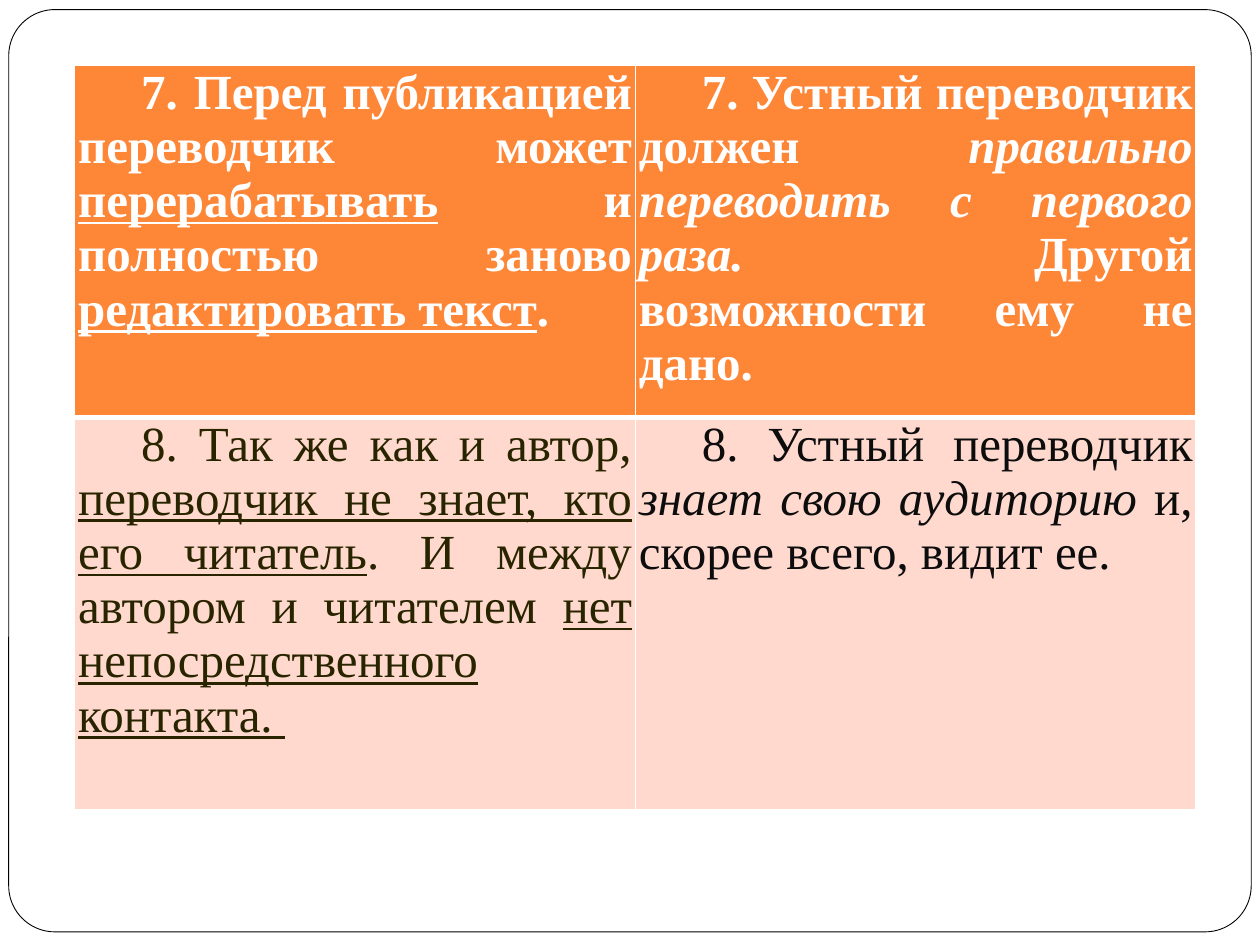
from lxml import etree
from pptx import Presentation
from pptx.dml.color import RGBColor
from pptx.enum.shapes import MSO_SHAPE
from pptx.enum.text import PP_ALIGN
from pptx.oxml.ns import qn
from pptx.util import Pt

ROUNDED = MSO_SHAPE.ROUNDED_RECTANGLE
JUSTIFY = PP_ALIGN.JUSTIFY

WHITE = RGBColor(0xFF, 0xFF, 0xFF)
BLACK = RGBColor(0x00, 0x00, 0x00)
ORANGE = RGBColor(0xFE, 0x86, 0x37)
PEACH = RGBColor(0xFF, 0xD9, 0xCE)
BROWN = RGBColor(0x29, 0x24, 0x00)
INK = RGBColor(0x0D, 0x0D, 0x0D)

PLAIN, UNDERLINED, ITALIC = "plain", "underlined", "italic"

COMPARISON = [
    {
        "height": 201, "fill": ORANGE, "bold": True, "colors": (WHITE, WHITE),
        "borders": {"L": 1, "R": 1, "T": 1, "B": 3},
        "cells": [
            [("7. Перед публикацией переводчик может ", PLAIN),
             ("перерабатывать", UNDERLINED),
             (" и полностью заново ", PLAIN),
             ("редактировать текст", UNDERLINED),
             (". ", PLAIN)],
            [("7. Устный переводчик должен ", PLAIN),
             ("правильно переводить с первого раза. ", ITALIC),
             ("Другой возможности ему не дано. ", PLAIN)],
        ],
    },
    {
        "height": 224, "fill": PEACH, "bold": False, "colors": (BROWN, INK),
        "borders": {"L": 1, "R": 1, "T": 3, "B": 1},
        "cells": [
            [("8. Так же как и автор, ", PLAIN),
             ("переводчик не знает, кто его читатель", UNDERLINED),
             (". И между автором и читателем ", PLAIN),
             ("нет непосредственного контакта. ", UNDERLINED)],
            [("8. Устный переводчик ", PLAIN),
             ("знает свою аудиторию ", ITALIC),
             ("и, скорее всего, видит ее. ", PLAIN)],
        ],
    },
]
COLUMN_WIDTH = 320.4


def set_borders(cell, widths):
    properties = cell._tc.get_or_add_tcPr()
    for side, width in widths.items():
        border = etree.SubElement(properties, qn(f"a:ln{side}"), w=str(Pt(width)))
        fill = etree.SubElement(border, qn("a:solidFill"))
        etree.SubElement(fill, qn("a:srgbClr"), val=str(WHITE))


def fill_cell(cell, row, color, phrases):
    set_borders(cell, row["borders"])
    cell.fill.solid()
    cell.fill.fore_color.rgb = row["fill"]
    cell.margin_left = cell.margin_right = Pt(2)
    cell.margin_top = cell.margin_bottom = Pt(0)
    paragraph = cell.text_frame.paragraphs[0]
    paragraph.alignment = JUSTIFY
    indents = paragraph._p.get_or_add_pPr()
    indents.set("marL", "0")
    indents.set("indent", str(Pt(36)))
    paragraph.font.name = "Times New Roman"
    paragraph.font.size = Pt(28)
    paragraph.font.bold = row["bold"]
    paragraph.font.color.rgb = color
    for wording, style in phrases:
        run = paragraph.add_run()
        run.text = wording
        if style == UNDERLINED:
            run.font.underline = True
        elif style == ITALIC:
            run.font.italic = True


def main():
    presentation = Presentation()
    presentation.slide_width, presentation.slide_height = Pt(720), Pt(540)
    slide = presentation.slides.add_slide(presentation.slide_layouts[6])

    frame = slide.shapes.add_shape(ROUNDED, Pt(5), Pt(5.5), Pt(710), Pt(527))
    frame.adjustments[0] = 0.05
    frame.shadow.inherit = False
    frame.fill.solid()
    frame.fill.fore_color.rgb = WHITE
    frame.line.color.rgb = BLACK
    frame.line.width = Pt(0.5)

    table = slide.shapes.add_table(
        len(COMPARISON), 2, Pt(42.7), Pt(37.5), Pt(2 * COLUMN_WIDTH),
        Pt(sum(row["height"] for row in COMPARISON))).table
    for column in table.columns:
        column.width = Pt(COLUMN_WIDTH)
    for row, table_row in zip(COMPARISON, table.rows):
        table_row.height = Pt(row["height"])
        for cell, color, phrases in zip(table_row.cells, row["colors"], row["cells"]):
            fill_cell(cell, row, color, phrases)

    presentation.save("out.pptx")


if __name__ == "__main__":
    main()
